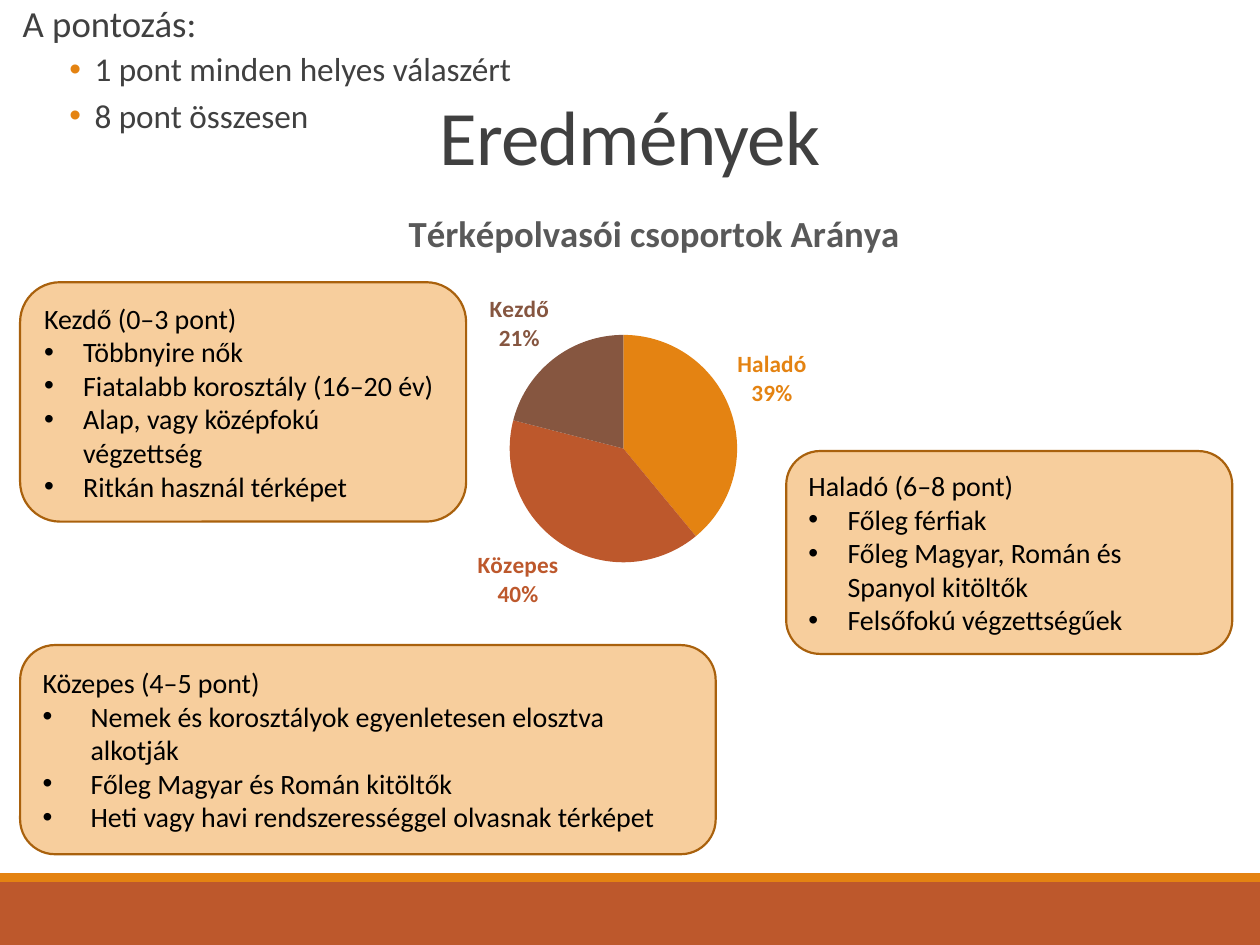
import pptx
import pptx.chart.data
import pptx.dml.color
import pptx.enum.chart
import pptx.enum.shapes
import pptx.enum.text
import pptx.util
from lxml import etree
from pptx.util import Inches

COLORS = {
    "orange": "E48312",
    "rust": "BD582C",
    "brown": "865640",
    "card": "F7CE9D",
    "card_line": "A9610D",
    "text": "404040",
    "chart_title": "595959",
    "black": "000000",
}
FONT = "Calibri"
GROUPS = [("Haladó", 39, "orange"), ("Közepes", 40, "rust"), ("Kezdő", 21, "brown")]
CARDS = [
    ((0.16, 2.24, 3.54, 1.9), 0.31, "Kezdő (0–3 pont)",
     ["Többnyire nők", "Fiatalabb korosztály (16–20 év)",
      "Alap, vagy középfokú végzettség", "Ritkán használ térképet"]),
    ((0.16, 5.12, 5.52, 1.66), 0.38, "Közepes (4–5 pont)",
     ["Nemek és korosztályok egyenletesen elosztva alkotják",
      "Főleg Magyar és Román kitöltők",
      "Heti vagy havi rendszerességgel olvasnak térképet"]),
    ((6.24, 3.58, 3.54, 1.61), 0.31, "Haladó (6–8 pont)",
     ["Főleg férfiak", "Főleg Magyar, Román és Spanyol kitöltők",
      "Felsőfokú végzettségűek"]),
]


def color(name):
    return pptx.dml.color.RGBColor.from_string(COLORS[name])


def set_font(font, size, color_name, bold=False):
    font.name = FONT
    font.size = pptx.util.Pt(size)
    font.bold = bold
    font.color.rgb = color(color_name)


def set_indent(paragraph, left, first=0):
    properties = paragraph._p.get_or_add_pPr()
    properties.set("marL", str(Inches(left)))
    properties.set("indent", str(Inches(first)))
    return properties


def add_bullet(paragraph, left, hanging, color_name):
    properties = set_indent(paragraph, left, -hanging)
    bullet_color = etree.SubElement(properties, pptx.oxml.ns.qn("a:buClr"))
    etree.SubElement(bullet_color, pptx.oxml.ns.qn("a:srgbClr"), val=COLORS[color_name])
    etree.SubElement(properties, pptx.oxml.ns.qn("a:buFont"), typeface="Arial")
    etree.SubElement(properties, pptx.oxml.ns.qn("a:buChar"), char="•")


def add_paragraph(frame, text, first):
    paragraph = frame.paragraphs[0] if first else frame.add_paragraph()
    paragraph.text = text
    paragraph.alignment = pptx.enum.text.PP_ALIGN.LEFT
    return paragraph


def add_box(slide, kind, position, fill, line=None):
    shape = slide.shapes.add_shape(kind, *map(Inches, position))
    shape.shadow.inherit = False
    shape.fill.solid()
    shape.fill.fore_color.rgb = color(fill)
    if line:
        shape.line.color.rgb = color(line)
        shape.line.width = pptx.util.Pt(1.25)
    else:
        shape.line.fill.background()
    return shape


def add_title(slide):
    frame = slide.shapes.add_textbox(Inches(0), Inches(0.76), Inches(10), Inches(0.73)).text_frame
    frame.word_wrap = True
    frame.vertical_anchor = pptx.enum.text.MSO_ANCHOR.BOTTOM
    paragraph = add_paragraph(frame, "Eredmények", True)
    paragraph.alignment = pptx.enum.text.PP_ALIGN.CENTER
    paragraph.line_spacing = 0.85
    set_font(paragraph.font, 44, "text")
    paragraph.runs[0]._r.get_or_add_rPr().set("spc", "-50")


def add_scoring(slide):
    frame = slide.shapes.add_textbox(0, 0, Inches(4.55), Inches(1.2)).text_frame
    frame.word_wrap = True
    frame.margin_left = frame.margin_right = 0
    lines = ["A pontozás:", "1 pont minden helyes válaszért", "8 pont összesen"]
    for index, text in enumerate(lines):
        heading = index == 0
        paragraph = add_paragraph(frame, text, heading)
        paragraph.line_spacing = 0.9
        paragraph.space_before = pptx.util.Pt(12 if heading else 2)
        paragraph.space_after = pptx.util.Pt(2 if heading else 4)
        if heading:
            set_indent(paragraph, 0.18)
        else:
            add_bullet(paragraph, 0.75, 0.2, "orange")
        set_font(paragraph.font, 21 if heading else 19, "text")


def add_card(slide, position, indent, heading, items):
    kind = pptx.enum.shapes.MSO_SHAPE.ROUNDED_RECTANGLE
    frame = add_box(slide, kind, position, "card", "card_line").text_frame
    frame.word_wrap = True
    frame.vertical_anchor = pptx.enum.text.MSO_ANCHOR.MIDDLE
    for index, text in enumerate([heading, *items]):
        paragraph = add_paragraph(frame, text, index == 0)
        if index:
            add_bullet(paragraph, indent, indent, "black")
        set_font(paragraph.font, 16, "black")


def set_layout(element, **values):
    for old in element.findall(pptx.oxml.ns.qn("c:layout")):
        element.remove(old)
    layout = etree.Element(pptx.oxml.ns.qn("c:layout"))
    manual = etree.SubElement(layout, pptx.oxml.ns.qn("c:manualLayout"))
    for tag, value in values.items():
        etree.SubElement(manual, pptx.oxml.ns.qn(f"c:{tag}"), val=str(value))
    text = element.find(pptx.oxml.ns.qn("c:tx"))
    element.insert(0 if text is None else 1, layout)


def style_label(label, color_name):
    set_font(label.font, 13.3, color_name, True)
    label.position = pptx.enum.chart.XL_LABEL_POSITION.OUTSIDE_END
    element = label._dLbl
    for tag, shown in (("showVal", "0"), ("showCatName", "1"), ("showPercent", "1")):
        element.find(pptx.oxml.ns.qn(f"c:{tag}")).set("val", shown)
    etree.SubElement(element, pptx.oxml.ns.qn("c:separator")).text = "\n"


def add_group_chart(slide):
    data = pptx.chart.data.CategoryChartData()
    data.categories = [name for name, _, _ in GROUPS]
    data.add_series("Series 1", [value for _, value, _ in GROUPS])
    chart = slide.shapes.add_chart(
        pptx.enum.chart.XL_CHART_TYPE.PIE,
        Inches(2.17), Inches(1.49), Inches(5.67), Inches(3.54), data).chart
    set_font(chart.font, 10, "black")
    chart.has_legend = False
    chart.has_title = True
    title = chart.chart_title
    title.text_frame.text = "Térképolvasói csoportok Aránya"
    set_font(title.text_frame.paragraphs[0].runs[0].font, 21, "chart_title", True)
    set_layout(title._element, xMode="edge", yMode="edge", x=0.18, y=0.03)
    plot_area = chart._chartSpace.chart.plotArea
    set_layout(plot_area, layoutTarget="inner", xMode="edge", yMode="edge",
               x=0.33, y=0.33, w=0.32, h=0.51)
    chart.plots[0].vary_by_categories = True
    points = chart.plots[0].series[0].points
    for index, (_, _, color_name) in enumerate(GROUPS):
        point = points[index]
        point.format.fill.solid()
        point.format.fill.fore_color.rgb = color(color_name)
        style_label(point.data_label, color_name)


def main():
    presentation = pptx.Presentation()
    presentation.slide_width = Inches(10)
    presentation.slide_height = Inches(7.5)
    slide = presentation.slides.add_slide(presentation.slide_layouts[6])
    rectangle = pptx.enum.shapes.MSO_SHAPE.RECTANGLE
    add_box(slide, rectangle, (0, 7, 10, 0.5), "rust")
    add_box(slide, rectangle, (0, 6.93, 10, 0.07), "orange")
    add_title(slide)
    add_scoring(slide)
    add_group_chart(slide)
    for card in CARDS:
        add_card(slide, *card)
    presentation.save("out.pptx")


if __name__ == "__main__":
    main()
